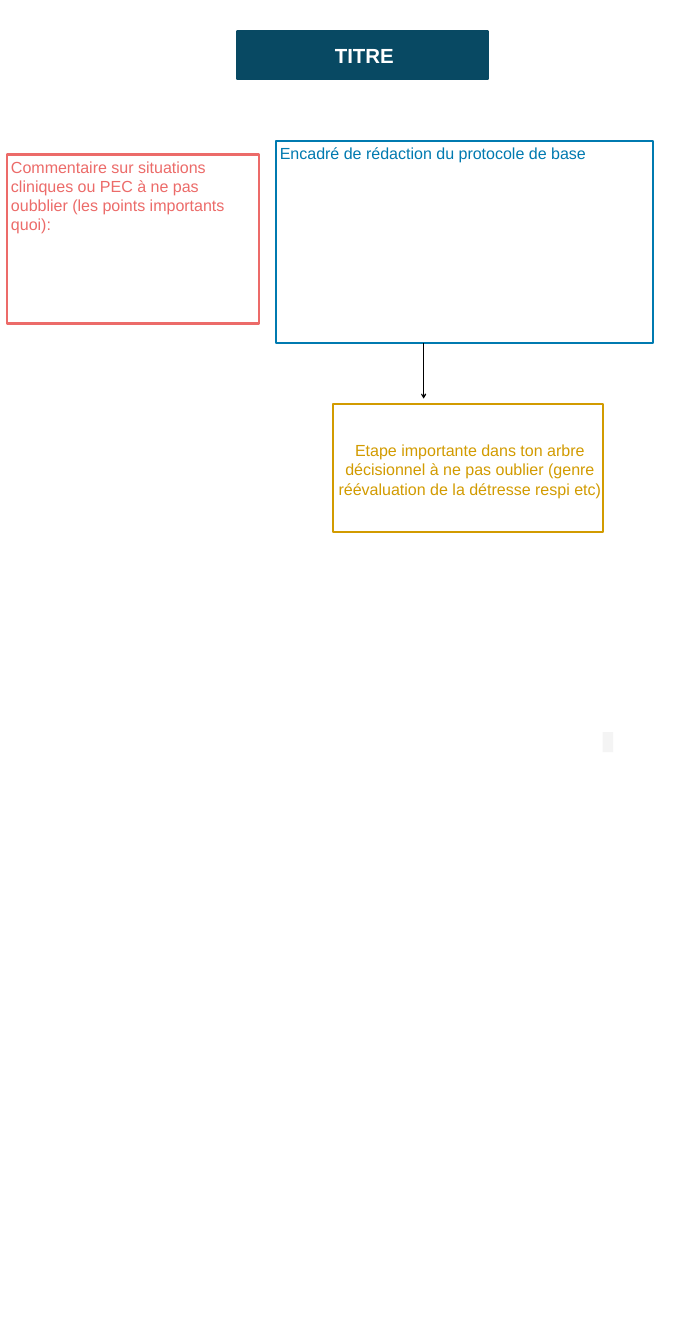
from lxml import etree
from pptx import Presentation
from pptx.dml.color import RGBColor
from pptx.enum.shapes import MSO_CONNECTOR, MSO_SHAPE
from pptx.enum.text import MSO_ANCHOR, MSO_AUTO_SIZE, PP_ALIGN
from pptx.oxml.ns import qn
from pptx.util import Pt

RECTANGLE, STRAIGHT = MSO_SHAPE.RECTANGLE, MSO_CONNECTOR.STRAIGHT
TOP, MIDDLE = MSO_ANCHOR.TOP, MSO_ANCHOR.MIDDLE
LEFT, CENTER = PP_ALIGN.LEFT, PP_ALIGN.CENTER
NO_FIT = MSO_AUTO_SIZE.NONE

WHITE = RGBColor(0xFF, 0xFF, 0xFF)
BLACK = RGBColor(0x00, 0x00, 0x00)
PALE_GREY = RGBColor(0xF4, 0xF4, 0xF4)
NAVY = RGBColor(0x08, 0x49, 0x63)
BLUE = RGBColor(0x00, 0x7A, 0xB0)
CORAL = RGBColor(0xEC, 0x6B, 0x69)
GOLD = RGBColor(0xD2, 0x9B, 0x00)

PAGE_SIZE = (960, 1842.5)
TITLE = ("TITRE", (325.5, 43.2, 343.4, 65.5))
FRAMES = [
    ("Encadré de rédaction du protocole de base",
     (378.7, 193, 517, 277.2), BLUE, TOP, LEFT),
    ("Commentaire sur situations cliniques ou PEC à ne pas oubblier (les points importants quoi):",
     (10.1, 211.7, 345.6, 231.8), CORAL, TOP, LEFT),
    ("Etape importante dans ton arbre décisionnel à ne pas oublier (genre réévaluation de la détresse respi etc)",
     (456.5, 554.4, 370.8, 175), GOLD, MIDDLE, CENTER),
]
GREY_MARK = (826.6, 1003.7, 14.4, 27.4)
ARROW = (581, 470.2, 581, 546.5)


def points(values):
    return [Pt(value) for value in values]


def apply(target, values):
    for name, value in values.items():
        setattr(target, name, value)


def paint(shape, fill, line=None):
    shape.fill.solid()
    shape.fill.fore_color.rgb = fill
    if line is None:
        shape.line.fill.background()
    else:
        shape.line.color.rgb = line
        shape.line.width = Pt(3)


def write(shape, text, size, color, anchor, align, bottom=0, bold=False):
    frame = shape.text_frame
    apply(frame, {
        "text": text, "word_wrap": True, "auto_size": NO_FIT,
        "vertical_anchor": anchor, "margin_left": Pt(5), "margin_top": Pt(3.6),
        "margin_right": Pt(0), "margin_bottom": Pt(bottom),
    })
    para = frame.paragraphs[0]
    para.alignment = align
    apply(para.font, {"name": "Arial", "size": Pt(size), "bold": bold})
    para.font.color.rgb = color


def add_rectangle(page, place, fill, line=None):
    box = page.shapes.add_shape(RECTANGLE, *points(place))
    box.shadow.inherit = False
    paint(box, fill, line)
    return box


def add_arrow(page, ends):
    arrow = page.shapes.add_connector(STRAIGHT, *points(ends))
    arrow.line.color.rgb = BLACK
    arrow.line.width = Pt(1.5)
    etree.SubElement(arrow.line._get_or_add_ln(), qn("a:tailEnd"), type="arrow")
    etree.SubElement(arrow._element.spPr, qn("a:effectLst"))


def main():
    deck = Presentation()
    deck.slide_width, deck.slide_height = points(PAGE_SIZE)
    page = deck.slides.add_slide(deck.slide_layouts[5])

    text, place = TITLE
    title = page.shapes.title
    apply(title, dict(zip(("left", "top", "width", "height"), points(place))))
    paint(title, NAVY, NAVY)
    write(title, text, 28, WHITE, MIDDLE, CENTER, bottom=3.6, bold=True)

    add_rectangle(page, GREY_MARK, PALE_GREY)
    for text, place, color, anchor, align in FRAMES:
        box = add_rectangle(page, place, WHITE, color)
        write(box, text, 22, color, anchor, align)
    add_arrow(page, ARROW)
    deck.save("out.pptx")


if __name__ == "__main__":
    main()
